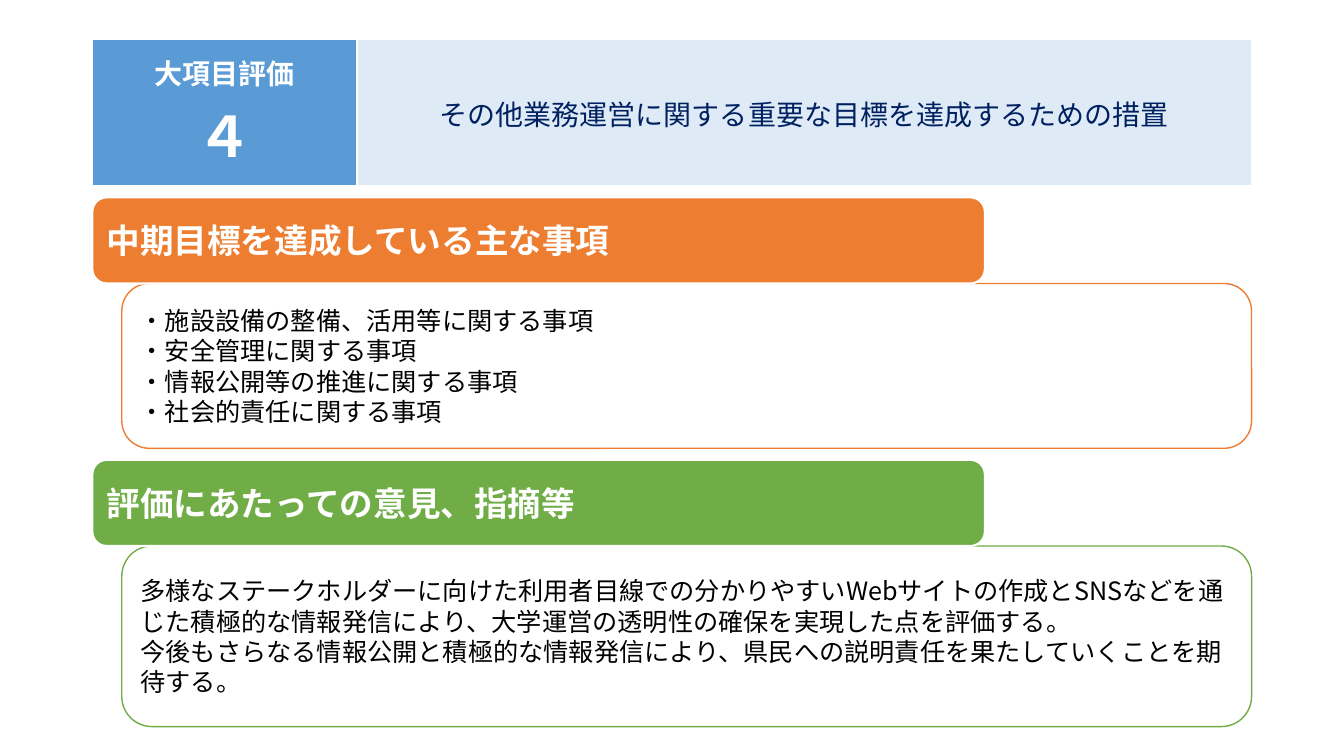
"""Build the evaluation slide: a title band and two headed sections."""
from lxml.etree import SubElement
from pptx import Presentation
from pptx.dml.color import RGBColor
from pptx.enum.shapes import MSO_SHAPE
from pptx.enum.text import MSO_ANCHOR, PP_ALIGN
from pptx.oxml.ns import qn
from pptx.util import Pt

PX = 9525
THEME = {
    "white": RGBColor.from_string("FFFFFF"),
    "black": RGBColor.from_string("000000"),
    "navy": RGBColor.from_string("002060"),
    "blue": RGBColor.from_string("5B9BD5"),
    "pale": RGBColor.from_string("DEEBF7"),
    "orange": RGBColor.from_string("ED7D31"),
    "green": RGBColor.from_string("70AD47"),
    "latin": "Calibri",
    "japanese": "Noto Sans CJK JP",
    "number": 40,
    "heading": 24,
    "title": 20,
    "body": 18,
}


def write(frame, lines, color, latin, align, bold=False):
    for index, (text, size) in enumerate(lines):
        paragraph = frame.paragraphs[0] if index == 0 else frame.add_paragraph()
        paragraph.alignment = align
        run = paragraph.add_run()
        run.text = text
        run.font.color.rgb = THEME[color]
        font_format = {"name": THEME[latin], "size": Pt(THEME[size]), "bold": bold}
        for name, value in font_format.items():
            setattr(run.font, name, value)
        east_asian = SubElement(run.font._element, qn("a:ea"))
        east_asian.set("typeface", THEME["japanese"])


def add_box(slide, box, fill, line, width, lines, color, bold=False):
    shape = slide.shapes.add_shape(MSO_SHAPE.ROUNDED_RECTANGLE, *[n * PX for n in box])
    shape.shadow.inherit = False
    shape.fill.solid()
    shape.fill.fore_color.rgb = THEME[fill]
    shape.line.color.rgb = THEME[line]
    shape.line.width = Pt(width)
    shape.text_frame.word_wrap = True
    shape.text_frame.vertical_anchor = MSO_ANCHOR.MIDDLE
    write(shape.text_frame, lines, color, "japanese", PP_ALIGN.LEFT, bold)


presentation = Presentation()
presentation.slide_width = 1280 * PX
presentation.slide_height = 720 * PX
slide = presentation.slides.add_slide(presentation.slide_layouts[6])

LEFT, TOP, WIDTH, BAND_HEIGHT = 88, 38, 1104, 139
band = slide.shapes.add_table(
    1, 2, LEFT * PX, TOP * PX, WIDTH * PX, BAND_HEIGHT * PX
).table
band_cells = [
    (252, "blue", "white", True, [("大項目評価", "title"), ("４", "number")]),
    (852, "pale", "navy", False,
     [("その他業務運営に関する重要な目標を達成するための措置", "title")]),
]
cell_format = {
    "vertical_anchor": MSO_ANCHOR.MIDDLE,
    "margin_left": 4 * PX,
    "margin_right": 4 * PX,
    "margin_top": 0,
    "margin_bottom": 0,
}
for column, (width, fill, color, bold, lines) in enumerate(band_cells):
    band.columns[column].width = width * PX
    cell = band.cell(0, column)
    for name, value in cell_format.items():
        setattr(cell, name, value)
    cell.fill.solid()
    cell.fill.fore_color.rgb = THEME[fill]
    write(cell.text_frame, lines, color, "latin", PP_ALIGN.CENTER, bold)

HEADING_WIDTH, HEADING_HEIGHT, INDENT = 850, 82, 28
sections = [
    (188, 157, "orange", "中期目標を達成している主な事項", [
        "・施設設備の整備、活用等に関する事項",
        "・安全管理に関する事項",
        "・情報公開等の推進に関する事項",
        "・社会的責任に関する事項",
    ]),
    (438, 172, "green", "評価にあたっての意見、指摘等", [
        "多様なステークホルダーに向けた利用者目線での分かりやすいWebサイトの作成とSNSなどを"
        "通じた積極的な情報発信により、大学運営の透明性の確保を実現した点を評価する。",
        "今後もさらなる情報公開と積極的な情報発信により、県民への説明責任を果たしていくことを期待する。",
    ]),
]
for top, body_height, accent, heading, texts in sections:
    body_box = (LEFT + INDENT, top + HEADING_HEIGHT, WIDTH - INDENT, body_height)
    heading_box = (LEFT, top, HEADING_WIDTH, HEADING_HEIGHT)
    body_lines = [(text, "body") for text in texts]
    add_box(slide, body_box, "white", accent, 1, body_lines, "black")
    add_box(slide, heading_box, accent, "white", 1.5, [(heading, "heading")], "white", True)

presentation.save("out.pptx")
